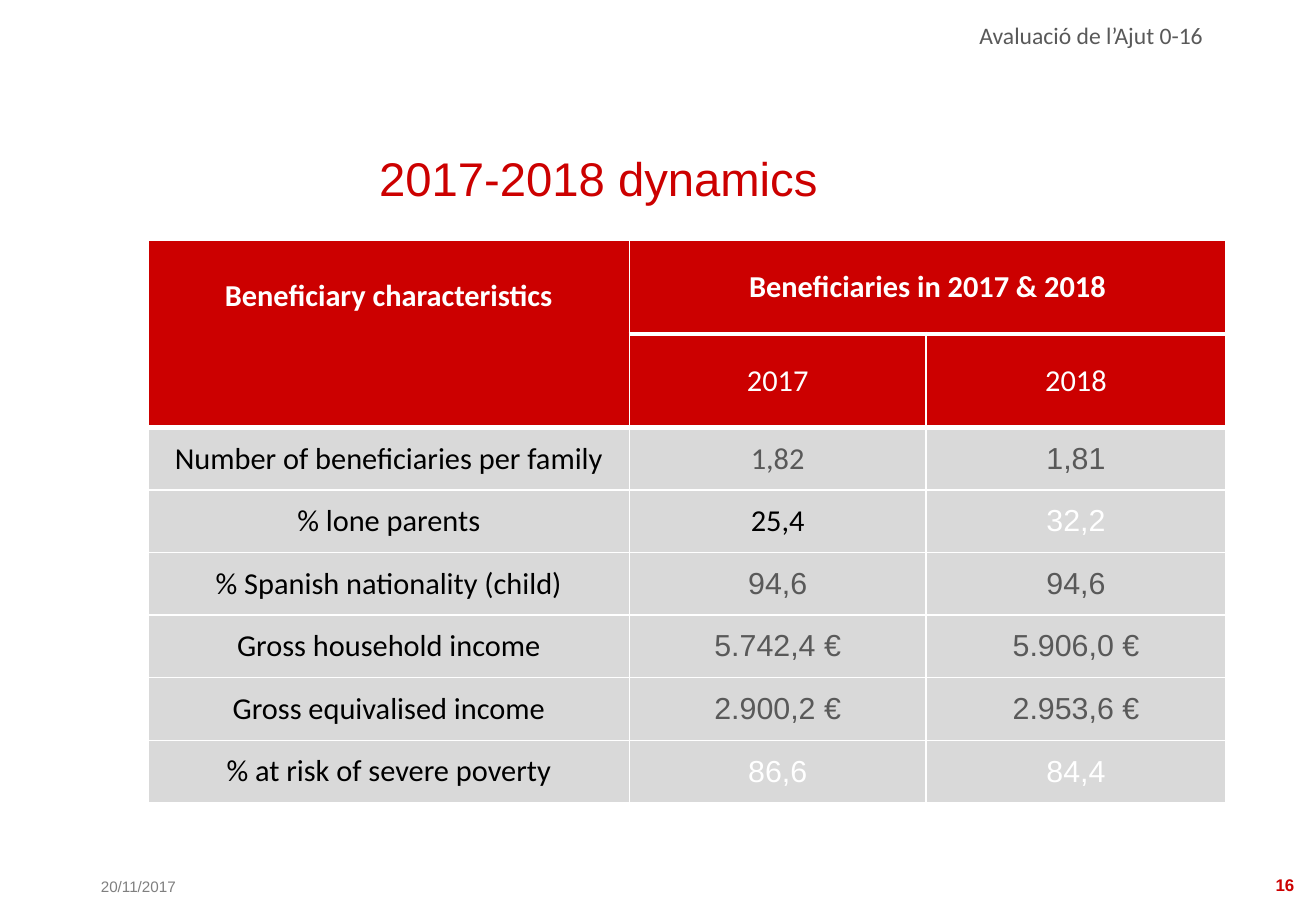
from dataclasses import dataclass
from typing import NamedTuple

from lxml.etree import SubElement
from pptx import Presentation
from pptx.dml.color import RGBColor
from pptx.enum.text import MSO_ANCHOR as Anchor, PP_ALIGN as Align
from pptx.oxml.ns import qn
from pptx.slide import Slide
from pptx.table import Table, _Cell as Cell
from pptx.text.text import TextFrame
from pptx.util import Emu, Pt

EMU_PER_PX = 4572


def px(length: int) -> Emu:
    return Emu(length * EMU_PER_PX)


@dataclass(frozen=True)
class Theme:
    red: str = "CC0000"
    white: str = "FFFFFF"
    black: str = "000000"
    band: str = "D9D9D9"
    dark_grey: str = "595959"
    mid_grey: str = "7F7F7F"
    sans: str = "Arial"
    body: str = "Calibri"
    title_size: int = 28
    table_size: int = 18
    header_size: int = 14
    number_size: int = 10
    date_size: int = 9
    thin: int = 1
    thick: int = 3


THEME = Theme()


class Box(NamedTuple):
    left: int
    top: int
    width: int
    height: int


class Insets(NamedTuple):
    left: int = 0
    top: int = 10
    right: int = 20
    bottom: int = 10


class Style(NamedTuple):
    font: str
    size: int
    color: str
    bold: bool = False
    align: Align = Align.LEFT


class Label(NamedTuple):
    text: str
    box: Box
    style: Style
    anchor: Anchor


class Value(NamedTuple):
    text: str
    color: str = THEME.dark_grey
    font: str = THEME.sans


class Measure(NamedTuple):
    name: str
    values: tuple[Value, Value]


LABELS = (
    Label("20/11/2017", Box(166, 1436, 184, 48),
          Style(THEME.sans, THEME.date_size, THEME.mid_grey), Anchor.BOTTOM),
    Label("16", Box(2050, 1434, 100, 50),
          Style(THEME.sans, THEME.number_size, THEME.red, True, Align.RIGHT), Anchor.BOTTOM),
    Label("Avaluació de l’Ajut 0-16", Box(634, 24, 1366, 68),
          Style(THEME.body, THEME.header_size, THEME.dark_grey, align=Align.RIGHT), Anchor.MIDDLE),
)
TITLE = Label("2017-2018 dynamics", Box(624, 230, 1012, 126),
              Style(THEME.sans, THEME.title_size, THEME.red), Anchor.MIDDLE)

YEARS = ("2017", "2018")
MEASURES = (
    Measure("Number of beneficiaries per family",
            (Value("1,82", font=THEME.body), Value("1,81"))),
    Measure("% lone parents",
            (Value("25,4", THEME.black, THEME.body), Value("32,2", THEME.white))),
    Measure("% Spanish nationality (child)", (Value("94,6"), Value("94,6"))),
    Measure("Gross household income", (Value("5.742,4 €"), Value("5.906,0 €"))),
    Measure("Gross equivalised income", (Value("2.900,2 €"), Value("2.953,6 €"))),
    Measure("% at risk of severe poverty",
            (Value("86,6", THEME.white), Value("84,4", THEME.white))),
)
TABLE_LEFT, TABLE_TOP = 244, 396
COLUMN_WIDTHS = (792, 488, 494)
HEADER_ROWS = 2
ROW_HEIGHTS = (154,) * HEADER_ROWS + (103,) * len(MEASURES)
CELL_INSETS = Insets(14, 0, 14, 0)
CORNER_INSETS = Insets(14, 61, 14, 0)


def write(frame: TextFrame, text: str, style: Style) -> None:
    frame.text = text
    paragraph = frame.paragraphs[0]
    paragraph.alignment = style.align
    font = paragraph.runs[0].font
    font.name = style.font
    font.size = Pt(style.size)
    font.bold = style.bold
    font.color.rgb = RGBColor.from_string(style.color)


def set_insets(target: TextFrame | Cell, insets: Insets) -> None:
    target.margin_left, target.margin_top, target.margin_right, target.margin_bottom = map(px, insets)


def fill_label(shape, label: Label) -> None:
    shape.left, shape.top, shape.width, shape.height = map(px, label.box)
    frame = shape.text_frame
    frame.word_wrap = True
    frame.vertical_anchor = label.anchor
    set_insets(frame, Insets())
    write(frame, label.text, label.style)


def add_title(slide: Slide) -> None:
    title = slide.shapes.title
    fill_label(title, TITLE)
    title.fill.solid()
    title.fill.fore_color.rgb = RGBColor.from_string(THEME.white)
    title.line.color.rgb = RGBColor.from_string(THEME.white)
    title.line.width = Pt(0.75)


def set_borders(cell: Cell, top: int, bottom: int) -> None:
    properties = cell._tc.get_or_add_tcPr()
    widths = {"a:lnL": THEME.thin, "a:lnR": THEME.thin, "a:lnT": top, "a:lnB": bottom}
    for position, (tag, width) in enumerate(widths.items()):
        line = SubElement(properties, qn(tag), w=str(Pt(width)))
        SubElement(SubElement(line, qn("a:solidFill")), qn("a:srgbClr"), val=THEME.white)
        properties.insert(position, line)


def format_cells(table: Table) -> None:
    for row_index, row in enumerate(table.rows):
        is_header = row_index < HEADER_ROWS
        top = THEME.thick if 0 < row_index <= HEADER_ROWS else THEME.thin
        bottom = THEME.thick if is_header else THEME.thin
        for cell in row.cells:
            cell.fill.solid()
            cell.fill.fore_color.rgb = RGBColor.from_string(THEME.red if is_header else THEME.band)
            cell.vertical_anchor = Anchor.MIDDLE
            set_insets(cell, CELL_INSETS)
            set_borders(cell, top, bottom)


def write_cell(cell: Cell, value: Value, bold: bool = False) -> None:
    style = Style(value.font, THEME.table_size, value.color, bold, Align.CENTER)
    write(cell.text_frame, value.text, style)


def add_measure_table(slide: Slide) -> None:
    box = Box(TABLE_LEFT, TABLE_TOP, sum(COLUMN_WIDTHS), sum(ROW_HEIGHTS))
    table = slide.shapes.add_table(len(ROW_HEIGHTS), len(COLUMN_WIDTHS), *map(px, box)).table
    table.first_row = table.horz_banding = False
    for column, width in zip(table.columns, COLUMN_WIDTHS):
        column.width = px(width)
    for row, height in zip(table.rows, ROW_HEIGHTS):
        row.height = px(height)
    format_cells(table)

    corner, group = table.cell(0, 0), table.cell(0, 1)
    corner.merge(table.cell(1, 0))
    group.merge(table.cell(0, 2))
    corner.vertical_anchor = Anchor.TOP
    set_insets(corner, CORNER_INSETS)
    write_cell(corner, Value("Beneficiary characteristics", THEME.white, THEME.body), bold=True)
    write_cell(group, Value("Beneficiaries in 2017 & 2018", THEME.white, THEME.body), bold=True)
    for column_index, year in enumerate(YEARS, 1):
        write_cell(table.cell(1, column_index), Value(year, THEME.white, THEME.body))
    for row_index, measure in enumerate(MEASURES, HEADER_ROWS):
        name = Value(measure.name, THEME.black, THEME.body)
        for column_index, value in enumerate((name, *measure.values)):
            write_cell(table.cell(row_index, column_index), value)


def main() -> None:
    presentation = Presentation()
    presentation.slide_width, presentation.slide_height = px(2166), px(1500)
    slide = presentation.slides.add_slide(presentation.slide_layouts[5])
    for label in LABELS:
        fill_label(slide.shapes.add_textbox(*map(px, label.box)), label)
    add_title(slide)
    add_measure_table(slide)
    presentation.save("out.pptx")


if __name__ == "__main__":
    main()
